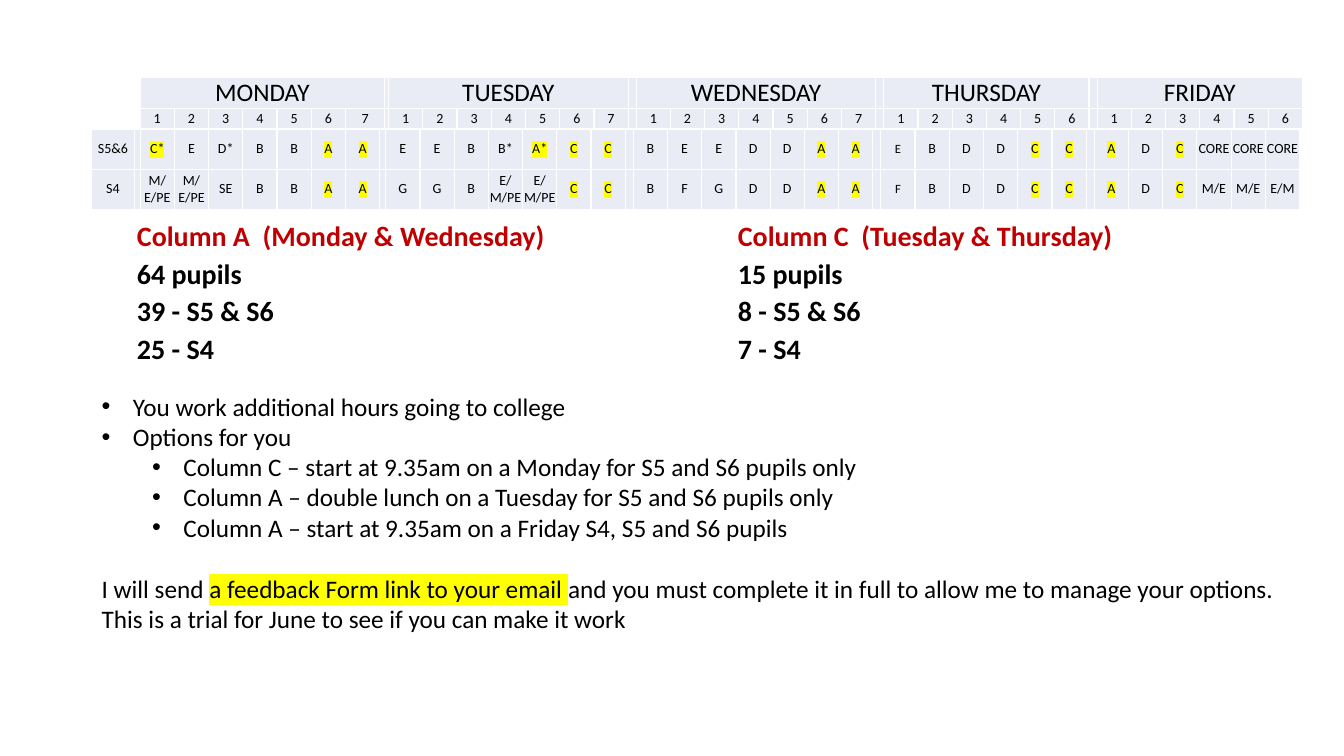
from dataclasses import dataclass
from typing import Optional

from lxml.etree import SubElement
from pptx import Presentation
from pptx.dml.color import RGBColor
from pptx.enum.text import MSO_ANCHOR, PP_ALIGN
from pptx.oxml.ns import qn
from pptx.util import Emu, Inches, Pt


@dataclass(frozen=True)
class Theme:
    font: str = "Calibri"
    ink: str = "000000"
    heading: str = "C00000"
    marker: str = "FFFF00"
    cell: str = "E9EBF5"
    border: str = "FFFFFF"
    heading_size: int = 20
    body_size: int = 18
    period_size: int = 10
    small_size: int = 9
    border_width: int = 1


@dataclass(frozen=True)
class Box:
    """Lengths in hundredths of the slide's width and height."""
    left: float
    top: float
    width: float
    height: float


@dataclass(frozen=True)
class Day:
    name: str
    senior: str
    junior: str
    gap: float = 0.6

    @property
    def periods(self) -> int:
        return len(self.senior.split())


@dataclass(frozen=True)
class Summary:
    box: Box
    title: str
    facts: tuple[str, ...]


@dataclass(frozen=True)
class Span:
    text: str
    marked: bool = False


@dataclass(frozen=True)
class Line:
    spans: tuple[Span, ...]
    level: Optional[int] = None
    space_before: int = 0


THEME = Theme()
SLIDE_WIDTH, SLIDE_HEIGHT = Inches(13.33), Inches(7.5)

# Timetable content; each day's gap follows its last period
DAYS = (
    Day("MONDAY", "C* E D* B B A A", "M/E/PE M/E/PE SE B B A A", 0.45),
    Day("TUESDAY", "E E B B* A* C C", "G G B E/M/PE E/M/PE C C"),
    Day("WEDNESDAY", "B E E D D A A", "B F G D D A A"),
    Day("THURSDAY", "E B D D C C", "F B D D C C"),
    Day("FRIDAY", "A D C CORE CORE CORE", "A D C M/E M/E E/M", 0),
)
MARKED_COLUMNS = {"A", "C"}
SMALL_FIRST_DAY = "THURSDAY"

# Timetable grid
LABEL, LABEL_GAP = 3.15, 0.45
MONDAY_EXTRA, MONDAY_HEADER_GAP = 0.37, 0.22
BODY_BOX = Box(6.83, 17.07, 89.87, 10.6)
HEADER_BOX = Box(BODY_BOX.left + LABEL + LABEL_GAP, 10.27,
                 BODY_BOX.width - LABEL - LABEL_GAP, 6.8)
PERIOD = (HEADER_BOX.width - sum(day.gap for day in DAYS)) / sum(day.periods for day in DAYS)

SUMMARIES = (
    Summary(Box(9.45, 29.87, 42.31, 18.93), "Column A  (Monday & Wednesday)",
            ("64 pupils", "39 - S5 & S6", "25 - S4")),
    Summary(Box(54.16, 32.93, 42.54, 15.87), "Column C  (Tuesday & Thursday)",
            ("15 pupils", "8 - S5 & S6", "7 - S4")),
)

NOTES_BOX = Box(6.83, 51.07, 89.87, 41.73)
NOTES = (
    Line((Span("You work additional hours going to college"),), 0),
    Line((Span("Options for you"),), 0),
    Line((Span("Column C – start at 9.35am on a Monday for S5 and S6 pupils only"),), 1),
    Line((Span("Column A – double lunch on a Tuesday for S5 and S6 pupils only"),), 1),
    Line((Span("Column A – start at 9.35am on a Friday S4, S5 and S6 pupils"),), 1),
    Line((Span("I will send "), Span("a feedback Form link to your email ", True),
          Span("and you must complete it in full to allow me to manage your options.")),
         space_before=22),
    Line((Span("This is a trial for June to see if you can make it work"),)),
)


def across(share: float) -> Emu:
    return Emu(round(SLIDE_WIDTH * share / 100))


def down(share: float) -> Emu:
    return Emu(round(SLIDE_HEIGHT * share / 100))


def place(box: Box) -> tuple[Emu, Emu, Emu, Emu]:
    return across(box.left), down(box.top), across(box.width), down(box.height)


def add_run(paragraph, text: str, size: int, color: str = THEME.ink,
            bold: bool = False, marked: bool = False) -> None:
    run = paragraph.add_run()
    run.text = text
    run.font.size = Pt(size)
    run.font.bold = bold
    run.font.color.rgb = RGBColor.from_string(color)
    if marked:
        highlight = SubElement(run.font._element, qn("a:highlight"))
        SubElement(highlight, qn("a:srgbClr"), val=THEME.marker)
    run.font.name = THEME.font


def style_cell(cell, text: str, size: int) -> None:
    cell.margin_left = cell.margin_right = cell.margin_top = cell.margin_bottom = 0
    cell.vertical_anchor = MSO_ANCHOR.MIDDLE
    properties = cell._tc.get_or_add_tcPr()
    for side in ("lnL", "lnR", "lnT", "lnB"):
        line = SubElement(properties, qn(f"a:{side}"), w=str(Pt(THEME.border_width)))
        fill = SubElement(line, qn("a:solidFill"))
        SubElement(fill, qn("a:srgbClr"), val=THEME.border)
    cell.fill.solid()
    cell.fill.fore_color.rgb = RGBColor.from_string(THEME.cell)
    paragraph = cell.text_frame.paragraphs[0]
    paragraph.alignment = PP_ALIGN.CENTER
    if text:
        add_run(paragraph, text, size, marked=text.strip("*") in MARKED_COLUMNS)
    else:
        SubElement(paragraph._p, qn("a:endParaRPr"), sz=str(size * 100))


def add_grid(slide, box: Box, widths: list[float], heights: list[float]):
    table = slide.shapes.add_table(len(heights), len(widths), *place(box)).table
    table.first_row = table.horz_banding = False
    for column, width in zip(table.columns, widths):
        column.width = across(width)
    for row, height in zip(table.rows, heights):
        row.height = down(height)
    return table


def add_timetable_body(slide) -> None:
    widths, rows = [LABEL, LABEL_GAP], [["S5&6", ""], ["S4", ""]]
    small_column = 0
    for day in DAYS:
        if day.name == SMALL_FIRST_DAY:
            small_column = len(widths)
        gap = [day.gap] if day.gap else []
        widths += [PERIOD] * day.periods + gap
        for row, subjects in zip(rows, (day.senior, day.junior)):
            row += subjects.split() + [""] * len(gap)
    table = add_grid(slide, BODY_BOX, widths, [BODY_BOX.height / 2] * 2)
    for row_index, row in enumerate(rows):
        for column_index, text in enumerate(row):
            size = THEME.small_size if column_index == small_column else THEME.period_size
            style_cell(table.cell(row_index, column_index), text, size)


def add_timetable_header(slide) -> None:
    widths, names, numbers = [], [], []
    for day in DAYS:
        gap = [day.gap] if day.gap else []
        widths += [PERIOD] * day.periods + gap
        names += [day.name] + [""] * (day.periods - 1 + len(gap))
        numbers += [str(number + 1) for number in range(day.periods)] + [""] * len(gap)
    monday_end = DAYS[0].periods
    widths[monday_end - 1] += MONDAY_EXTRA
    widths[monday_end] = MONDAY_HEADER_GAP
    table = add_grid(slide, HEADER_BOX, widths, [4.13, 2.67])
    for column, (name, number) in enumerate(zip(names, numbers)):
        style_cell(table.cell(0, column), name, THEME.body_size if name else THEME.period_size)
        style_cell(table.cell(1, column), number, THEME.period_size)
    for day in DAYS:
        first = names.index(day.name)
        table.cell(0, first).merge(table.cell(0, first + day.periods - 1))


def add_text_frame(slide, box: Box, anchor: MSO_ANCHOR):
    frame = slide.shapes.add_textbox(*place(box)).text_frame
    frame.word_wrap = True
    frame.vertical_anchor = anchor
    return frame


def add_summary(slide, summary: Summary) -> None:
    frame = add_text_frame(slide, summary.box, MSO_ANCHOR.BOTTOM)
    for index, text in enumerate((summary.title, *summary.facts)):
        paragraph = frame.add_paragraph() if index else frame.paragraphs[0]
        paragraph.line_spacing = 0.7
        paragraph.space_before = Pt(10 if index else 0)
        add_run(paragraph, text, THEME.heading_size, THEME.ink if index else THEME.heading, True)


def add_notes_text(slide) -> None:
    frame = add_text_frame(slide, NOTES_BOX, MSO_ANCHOR.TOP)
    for index, line in enumerate(NOTES):
        paragraph = frame.add_paragraph() if index else frame.paragraphs[0]
        paragraph.space_before = Pt(line.space_before)
        if line.level is not None:
            paragraph.level = line.level
            properties = paragraph._p.get_or_add_pPr()
            properties.set("marL", str(Inches(0.31 + 0.5 * line.level)))
            properties.set("indent", str(-Inches(0.31)))
            SubElement(properties, qn("a:buFont"), typeface="Arial")
            SubElement(properties, qn("a:buChar"), char="•")
        for span in line.spans:
            add_run(paragraph, span.text, THEME.body_size, marked=span.marked)


def main() -> None:
    presentation = Presentation()
    presentation.slide_width, presentation.slide_height = SLIDE_WIDTH, SLIDE_HEIGHT
    slide = presentation.slides.add_slide(presentation.slide_layouts[6])
    add_timetable_body(slide)
    add_timetable_header(slide)
    for summary in SUMMARIES:
        add_summary(slide, summary)
    add_notes_text(slide)
    presentation.save("out.pptx")


if __name__ == "__main__":
    main()
